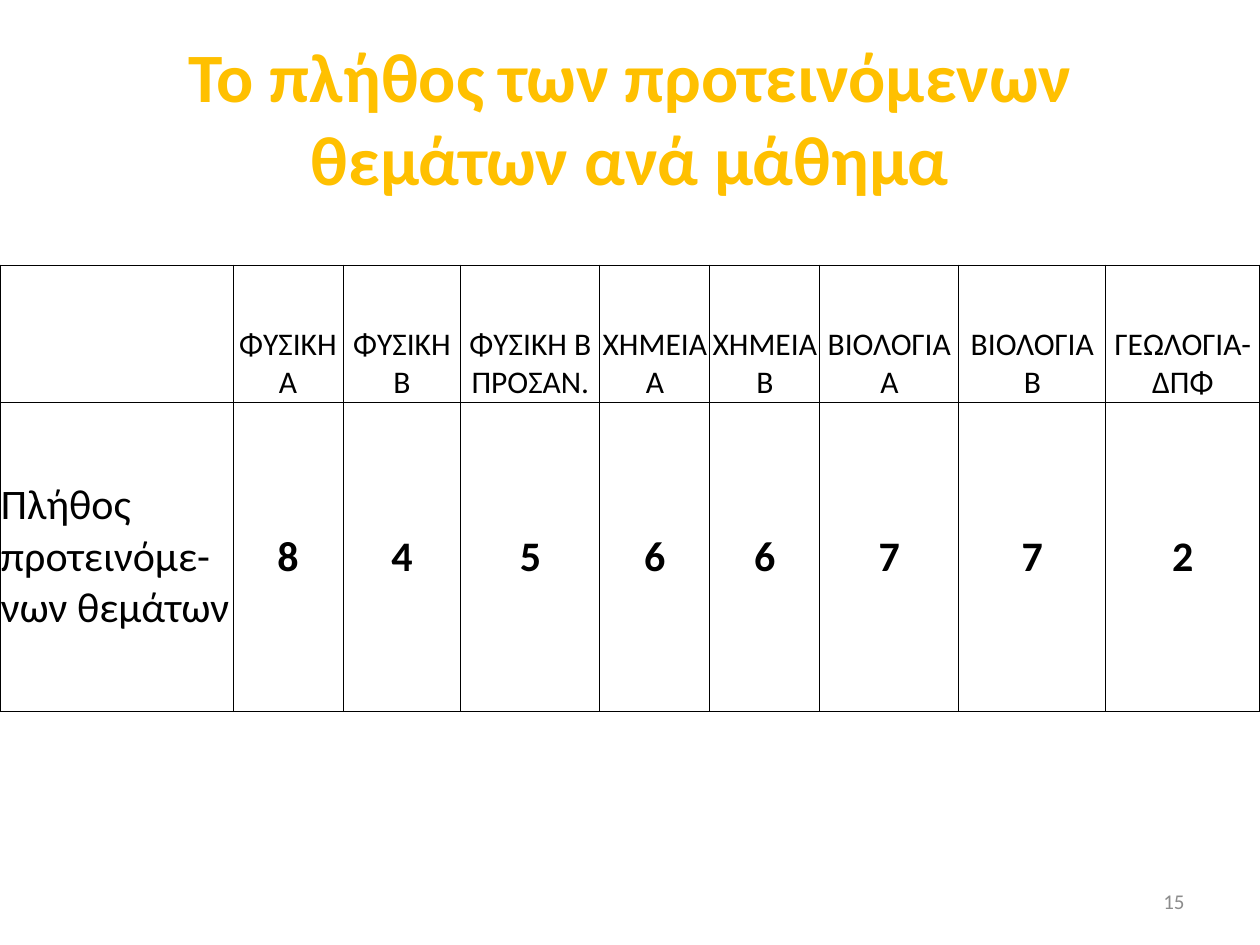
from lxml import etree
from pptx import Presentation
from pptx.dml.color import RGBColor
from pptx.enum.text import MSO_ANCHOR, PP_ALIGN
from pptx.oxml.ns import qn
from pptx.util import Pt

LEFT, CENTER, RIGHT = PP_ALIGN.LEFT, PP_ALIGN.CENTER, PP_ALIGN.RIGHT
MIDDLE, BOTTOM = MSO_ANCHOR.MIDDLE, MSO_ANCHOR.BOTTOM

# Content
TITLE = "Το πλήθος των προτεινόμενων θεμάτων ανά μάθημα"
ROW_LABEL = "Πλήθος προτεινόμε-νων θεμάτων"
PAGE_NUMBER = "15"
SUBJECTS = [  # subject, number of topics, column width in px
    ("ΦΥΣΙΚΗ Α", 8, 110),
    ("ΦΥΣΙΚΗ Β", 4, 118),
    ("ΦΥΣΙΚΗ Β ΠΡΟΣΑΝ.", 5, 139),
    ("ΧΗΜΕΙΑ Α", 6, 110),
    ("ΧΗΜΕΙΑ Β", 6, 110),
    ("ΒΙΟΛΟΓΙΑ Α", 7, 139),
    ("ΒΙΟΛΟΓΙΑ Β", 7, 147),
    ("ΓΕΩΛΟΓΙΑ-ΔΠΦ", 2, 154),
]

# Layout in px
SLIDE_SIZE = (1260, 945)
TITLE_BOX = (63, 38, 1134, 157)
NUMBER_BOX = (903, 876, 294, 50)
TABLE_TOP = 265
LABEL_WIDTH = 233
ROW_HEIGHTS = (137, 309)
CELL_INSET = 1

THEME = {
    "font": "Calibri",
    "title": "FFC000", "text": "000000", "number": "8C8C8C", "border": "000000",
    "title_size": 39.6, "header_size": 18, "body_size": 24, "number_size": 12,
    "border_width": 0.5,
}


def px(length):
    return round(length * 914400 / 126)


def place(shape, box):
    shape.left, shape.top, shape.width, shape.height = map(px, box)


def write(frame, text, *, size, color=THEME["text"], bold=False, align=CENTER):
    frame.word_wrap = True
    paragraph = frame.paragraphs[0]
    paragraph.alignment = align
    run = paragraph.add_run()
    run.text = text
    run.font.name = THEME["font"]
    run.font.size = Pt(size)
    run.font.bold = bold
    run.font.color.rgb = RGBColor.from_string(color)


def format_cell(cell, anchor):
    cell.vertical_anchor = anchor
    cell.margin_left = cell.margin_right = cell.margin_top = px(CELL_INSET)
    cell.margin_bottom = 0
    cell.fill.background()
    # Borders come before the fill in the cell properties
    properties = cell._tc.get_or_add_tcPr()
    for index, side in enumerate(("a:lnL", "a:lnR", "a:lnT", "a:lnB")):
        line = etree.Element(qn(side), w=str(Pt(THEME["border_width"])))
        fill = etree.SubElement(line, qn("a:solidFill"))
        etree.SubElement(fill, qn("a:srgbClr"), val=THEME["border"])
        properties.insert(index, line)


def add_topic_table(slide):
    widths = [LABEL_WIDTH] + [width for _, _, width in SUBJECTS]
    rows = [
        [""] + [subject for subject, _, _ in SUBJECTS],
        [ROW_LABEL] + [str(count) for _, count, _ in SUBJECTS],
    ]
    table = slide.shapes.add_table(
        len(rows), len(widths), 0, px(TABLE_TOP), px(sum(widths)), px(sum(ROW_HEIGHTS))
    ).table
    table.first_row = table.horz_banding = False
    for column, width in zip(table.columns, widths):
        column.width = px(width)
    for row, height in zip(table.rows, ROW_HEIGHTS):
        row.height = px(height)

    for row_index, texts in enumerate(rows):
        is_header = row_index == 0
        for column_index, text in enumerate(texts):
            cell = table.cell(row_index, column_index)
            is_label = column_index == 0
            format_cell(cell, BOTTOM if is_header else MIDDLE)
            if text:
                write(cell.text_frame, text,
                      size=THEME["header_size" if is_header else "body_size"],
                      bold=not is_header and not is_label,
                      align=LEFT if is_label else CENTER)


def main():
    presentation = Presentation()
    presentation.slide_width, presentation.slide_height = map(px, SLIDE_SIZE)
    slide = presentation.slides.add_slide(presentation.slide_layouts[5])

    # Title
    title = slide.shapes.title
    place(title, TITLE_BOX)
    title.text_frame.vertical_anchor = MIDDLE
    write(title.text_frame, TITLE, size=THEME["title_size"],
          color=THEME["title"], bold=True)

    # Topics per subject
    add_topic_table(slide)

    # Page number
    number = slide.shapes.add_textbox(*map(px, NUMBER_BOX))
    number.text_frame.vertical_anchor = MIDDLE
    write(number.text_frame, PAGE_NUMBER, size=THEME["number_size"],
          color=THEME["number"], align=RIGHT)

    presentation.save("out.pptx")


if __name__ == "__main__":
    main()
